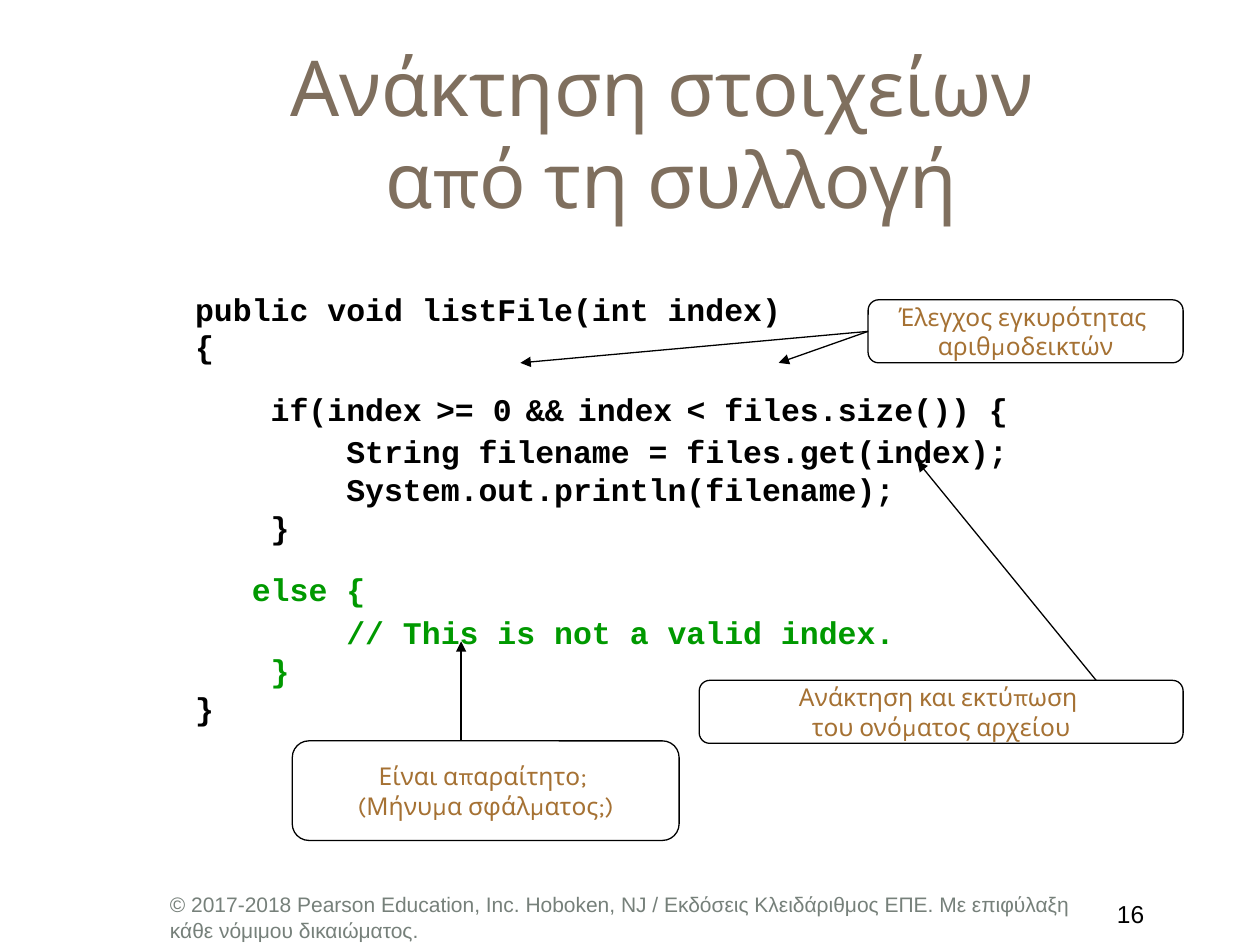
import pptx
import pptx.util
import pptx.dml.color
import pptx.enum.shapes
import pptx.enum.text
import pptx.oxml.ns
from lxml import etree

Inches = pptx.util.Inches
RGBColor = pptx.dml.color.RGBColor
ALIGN = pptx.enum.text.PP_ALIGN
ANCHOR = pptx.enum.text.MSO_ANCHOR

BLACK = RGBColor(0x00, 0x00, 0x00)
WHITE = RGBColor(0xFF, 0xFF, 0xFF)
TAUPE = RGBColor(0x7F, 0x6F, 0x5E)
GREY = RGBColor(0x76, 0x80, 0x7A)
BROWN = RGBColor(0xA5, 0x71, 0x33)
NAVY = RGBColor(0x1A, 0x31, 0x70)
GREEN = RGBColor(0x00, 0x99, 0x00)

CODE = {"font": "Courier New", "size": 18, "bold": True}
GAP = {"font": "Karla", "size": 32, "color": NAVY, "bold": True}
CODE_LINES = [
    (["public void listFile(int index)"], BLACK),
    (["{"], BLACK),
    (["    if(index", " ", ">= 0", " ", "&&", " ", "index", " ",
      "< files.size()) {\n        String filename = files.get(index);"], BLACK),
    (["        System.out.println(filename);"], BLACK),
    (["    }"], BLACK),
    (["    ", "else {"], GREEN),
    (["        // This is not a valid index."], GREEN),
    (["    }"], GREEN),
    (["}"], BLACK),
]


def write(para, text, *, font, size, color=BLACK, bold=False):
    """Append formatted text to a paragraph, with a line break at each newline."""
    for index, line in enumerate(text.split("\n")):
        if index:
            para.add_line_break()
        span = para.add_run()
        span.text = line
        span.font.name = font
        span.font.size = pptx.util.Pt(size)
        span.font.bold = bold
        span.font.color.rgb = color


def add_text_box(page, box, *, align=ALIGN.LEFT, anchor=ANCHOR.TOP, wrap=True):
    """Add an empty text box and return its text frame."""
    frame = page.shapes.add_textbox(*map(Inches, box)).text_frame
    frame.word_wrap = wrap
    frame.vertical_anchor = anchor
    frame.paragraphs[0].alignment = align
    return frame


def add_title(page, box):
    """Add the centred slide title."""
    frame = add_text_box(page, box, align=ALIGN.CENTER, anchor=ANCHOR.MIDDLE)
    write(frame.paragraphs[0], "Ανάκτηση στοιχείων \nαπό τη συλλογή",
          font="Karla", size=44, color=TAUPE)


def add_footer(page, box):
    """Add the copyright line and the page number at the right of the box."""
    left, top, width, height = box
    frame = add_text_box(page, (left, top, width - 0.5, height))
    write(frame.paragraphs[0],
          "© 2017-2018 Pearson Education, Inc. Hoboken, NJ / Εκδόσεις Κλειδάριθμος ΕΠΕ. "
          "Με επιφύλαξη κάθε νόμιμου δικαιώματος.",
          font="Arial", size=12, color=GREY)
    frame = add_text_box(page, (left + width - 0.58, top, 0.58, height), align=ALIGN.RIGHT)
    write(frame.paragraphs[0], "16", font="Arial", size=14)
    write(frame.paragraphs[0], " ", **CODE)


def add_code(page, box):
    """Add the method listing, with wide blanks around the condition."""
    frame = add_text_box(page, box, wrap=False)
    frame.auto_size = pptx.enum.text.MSO_AUTO_SIZE.SHAPE_TO_FIT_TEXT
    for index, (parts, color) in enumerate(CODE_LINES):
        para = frame.add_paragraph() if index else frame.paragraphs[0]
        for part in parts:
            if part.strip():
                write(para, part, color=color, **CODE)
            else:
                write(para, part, **GAP)


def add_callout(page, box, text):
    """Add a rounded note and return its shape."""
    shape = page.shapes.add_shape(
        pptx.enum.shapes.MSO_SHAPE.ROUNDED_RECTANGLE, *map(Inches, box))
    shape.shadow.inherit = False
    shape.fill.background()
    shape.line.color.rgb = BLACK
    shape.line.width = pptx.util.Pt(0.75)
    frame = shape.text_frame
    frame.word_wrap = False
    frame.vertical_anchor = ANCHOR.MIDDLE
    frame.paragraphs[0].alignment = ALIGN.CENTER
    write(frame.paragraphs[0], text, font="Karla", size=14, color=BROWN)
    return shape


def add_arrow(page, start, end):
    """Add a thin black arrow and return its connector."""
    arrow = page.shapes.add_connector(
        pptx.enum.shapes.MSO_CONNECTOR.STRAIGHT, *map(Inches, start + end))
    arrow.line.color.rgb = BLACK
    arrow.line.width = pptx.util.Pt(0.75)
    qn = pptx.oxml.ns.qn
    etree.SubElement(arrow.line._get_or_add_ln(), qn("a:tailEnd"), type="triangle")
    etree.SubElement(arrow._element.spPr, qn("a:effectLst"))
    return arrow


def add_notes_on_code(page, box):
    """Add the three callouts and their arrows inside the box."""
    left, top, width, height = box
    right, bottom = left + width, top + height
    check = add_callout(page, (right - 2.5, top, 2.5, 0.5),
                        "Έλεγχος εγκυρότητας \nαριθμοδεικτών")
    add_callout(page, (right - 3.84, top + 3.02, 3.84, 0.5),
                "Ανάκτηση και εκτύπωση \nτου ονόματος αρχείου")
    add_callout(page, (left, bottom - 0.79, 3.07, 0.79),
                "Είναι απαραίτητο; \n(Μήνυμα σφάλματος;)")
    for target in (left + 1.81, left + 3.86):
        arrow = add_arrow(page, (right - 2.5, top + 0.25), (target, top + 0.5))
        arrow.begin_connect(check, 1)
    add_arrow(page, (right - 0.69, top + 3.02), (left + 4.96, top + 1.28))
    add_arrow(page, (left + 1.34, bottom - 0.79), (left + 1.34, bottom - 1.58))


def main():
    """Build and save the slide."""
    deck = pptx.Presentation()
    deck.slide_width, deck.slide_height = Inches(10), Inches(7.5)
    page = deck.slides.add_slide(deck.slide_layouts[6])
    page.background.fill.solid()
    page.background.fill.fore_color.rgb = WHITE
    add_title(page, (1.08, 0.42, 8.5, 1.25))
    add_footer(page, (1.25, 7.03, 8.08, 0.33))
    add_code(page, (1.45, 2.25, 6.84, 3.13))
    add_notes_on_code(page, (2.32, 2.38, 7.07, 4.29))
    deck.save("out.pptx")


if __name__ == "__main__":
    main()
